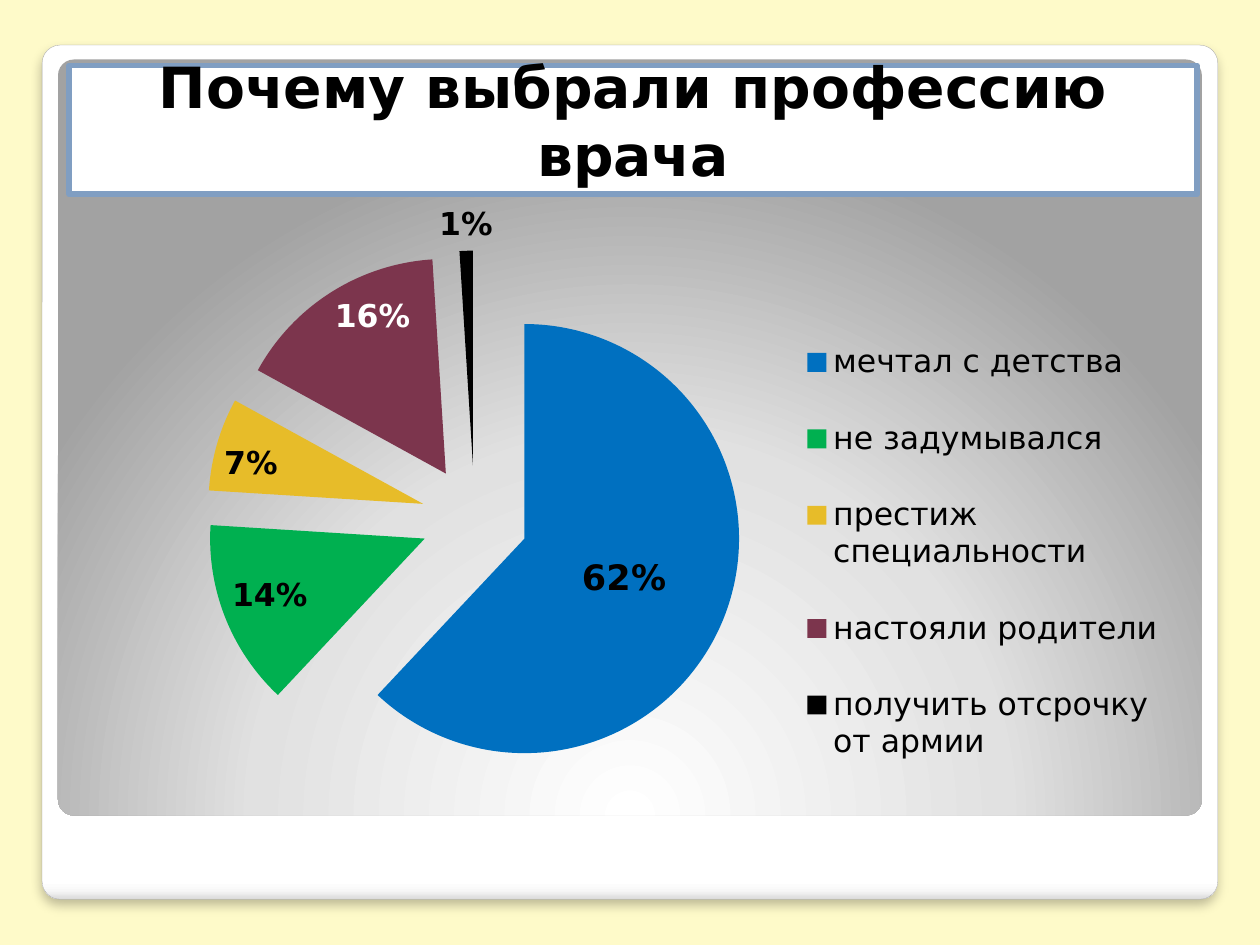
from lxml import etree
from pptx import Presentation
from pptx.chart.data import CategoryChartData
from pptx.dml.color import RGBColor
from pptx.enum.chart import XL_CHART_TYPE, XL_LABEL_POSITION, XL_LEGEND_POSITION
from pptx.enum.shapes import MSO_SHAPE
from pptx.enum.text import MSO_ANCHOR, PP_ALIGN
from pptx.oxml import parse_xml
from pptx.oxml.ns import nsdecls, qn
from pptx.util import Cm, Pt

PIE = XL_CHART_TYPE.PIE
CENTER = XL_LABEL_POSITION.CENTER
INSIDE = XL_LABEL_POSITION.INSIDE_END
OUTSIDE = XL_LABEL_POSITION.OUTSIDE_END
LEGEND_RIGHT = XL_LEGEND_POSITION.RIGHT
ROUNDED, RECT = MSO_SHAPE.ROUNDED_RECTANGLE, MSO_SHAPE.RECTANGLE
BOTTOM, ALIGN_CENTER = MSO_ANCHOR.BOTTOM, PP_ALIGN.CENTER
FONT = "DejaVu Sans"
BLACK, WHITE = "000000", "FFFFFF"
QUESTION = "Почему выбрали профессию врача"

# answer, percent, slice colour, label colour, label size, label position
ANSWERS = [
    ("мечтал с детства", 62, "0070C0", BLACK, 20, CENTER),
    ("не задумывался", 14, "00B050", BLACK, 18, INSIDE),
    ("престиж специальности", 7, "E7BC29", BLACK, 18, INSIDE),
    ("настояли родители", 16, "7C354D", WHITE, 18, INSIDE),
    ("получить отсрочку от армии", 1, BLACK, BLACK, 18, OUTSIDE),
]


def rgb(value):
    return RGBColor.from_string(value)


def set_font(font, size, color, bold=False):
    font.name, font.size, font.bold = FONT, Pt(size), bold
    font.color.rgb = rgb(color)


def set_gradient(s, stops, direction):
    """Fill a shape with (percent, colour) stops and a direction element."""
    s.fill.background()
    stop_xml = "".join(
        f'<a:gs pos="{pos * 1000}"><a:srgbClr val="{color}"/></a:gs>'
        for pos, color in stops)
    old = s._element.spPr.find(qn("a:noFill"))
    old.getparent().replace(old, parse_xml(
        f'<a:gradFill {nsdecls("a")} rotWithShape="1">'
        f'<a:gsLst>{stop_xml}</a:gsLst>{direction}</a:gradFill>'))


def add_panel(slide, box, stops, direction):
    s = slide.shapes.add_shape(ROUNDED, *box)
    s.adjustments[0] = 0.021
    s.shadow.inherit = False
    s.line.fill.background()
    set_gradient(s, stops, direction)
    return s


def add_frame(slide, left, top, width, height):
    # White card with a soft shadow below it
    card = add_panel(
        slide, (left, top, width, height),
        [(0, WHITE), (98, WHITE), (99, "F7F7F7"), (100, "DADADA")],
        '<a:lin ang="5400000" scaled="0"/>')
    card.line.color.rgb = rgb("A4A4A4")
    card.line.width = Pt(0.16)
    effects = card._element.spPr.find(qn("a:effectLst"))
    effects.append(parse_xml(
        f'<a:outerShdw {nsdecls("a")} blurRad="{Pt(6)}" dist="{Pt(4)}" '
        'dir="5400000" algn="t" rotWithShape="0"><a:srgbClr val="000000">'
        '<a:alpha val="25000"/></a:srgbClr></a:outerShdw>'))

    # Grey panel lit from below
    margin = Cm(0.32)
    add_panel(
        slide,
        (left + margin, top + Cm(0.29), width - 2 * margin, Cm(15.24)),
        [(0, WHITE), (55, "E1E1E1"), (100, "A2A2A2")],
        '<a:path path="circle"><a:fillToRect l="50000" t="175000" '
        'r="50000" b="-75000"/></a:path>')


def add_title(slide, left, top, width, height):
    s = slide.shapes.add_shape(RECT, left, top, width, height)
    s.shadow.inherit = False
    s.fill.solid()
    s.fill.fore_color.rgb = rgb(WHITE)
    s.line.color.rgb = rgb("809EC2")
    s.line.width = Pt(3.35)
    tf = s.text_frame
    tf.word_wrap = True
    tf.vertical_anchor = BOTTOM
    p = tf.paragraphs[0]
    p.text = QUESTION
    p.alignment = ALIGN_CENTER
    set_font(p.font, 32.4, BLACK, bold=True)


def set_layout(element, x, y, w, h, inner=False):
    """Give a chart part a fixed place, in fractions of the chart."""
    for old in element.findall(qn("c:layout")):
        element.remove(old)
    layout = parse_xml(f'<c:layout {nsdecls("c")}><c:manualLayout/></c:layout>')
    items = [("layoutTarget", "inner")] if inner else []
    items += [("xMode", "edge"), ("yMode", "edge"),
              ("x", x), ("y", y), ("w", w), ("h", h)]
    for tag, value in items:
        etree.SubElement(layout[0], qn(f"c:{tag}")).set("val", str(value))
    # The layout leads the plot area and follows the legend position
    position = element.find(qn("c:legendPos"))
    if position is None:
        element.insert(0, layout)
    else:
        position.addnext(layout)


def add_pie(slide, left, top, width, height):
    data = CategoryChartData(number_format='0"%"')
    data.categories = [answer[0] for answer in ANSWERS]
    data.add_series(QUESTION, [answer[1] for answer in ANSWERS])
    chart = slide.shapes.add_chart(PIE, left, top, width, height, data).chart
    chart.has_title = False
    set_font(chart.font, 18, BLACK)
    plot = chart.plots[0]
    plot.vary_by_categories = True

    # Slices pulled apart, each with its own label
    series = plot.series[0]
    series._element.find(qn("c:tx")).addnext(
        parse_xml(f'<c:explosion {nsdecls("c")} val="25"/>'))
    for i, (_, _, color, label_color, size, position) in enumerate(ANSWERS):
        point = series.points[i]
        point.format.fill.solid()
        point.format.fill.fore_color.rgb = rgb(color)
        label = point.data_label
        set_font(label.font, size, label_color, bold=True)
        label.position = position

    # Legend
    chart.has_legend = True
    legend = chart.legend
    legend.position = LEGEND_RIGHT
    legend.include_in_layout = False
    set_font(legend.font, 18, BLACK)
    set_layout(legend._element, 0.67, 0.18, 0.32, 0.82)
    plot_area = chart._chartSpace.chart.plotArea
    set_layout(plot_area, 0.15, 0.09, 0.47, 0.89, inner=True)


def main():
    prs = Presentation()
    prs.slide_width, prs.slide_height = Cm(25.4), Cm(19.05)
    slide = prs.slides.add_slide(prs.slide_layouts[6])
    slide.background.fill.solid()
    slide.background.fill.fore_color.rgb = rgb("FEFAC9")
    add_frame(slide, Cm(0.85), Cm(0.91), Cm(23.7), Cm(17.22))
    add_title(slide, Cm(1.4), Cm(1.32), Cm(22.73), Cm(2.6))
    add_pie(slide, Cm(0.71), Cm(3.94), Cm(23.01), Cm(12.19))
    prs.save("out.pptx")


if __name__ == "__main__":
    main()
